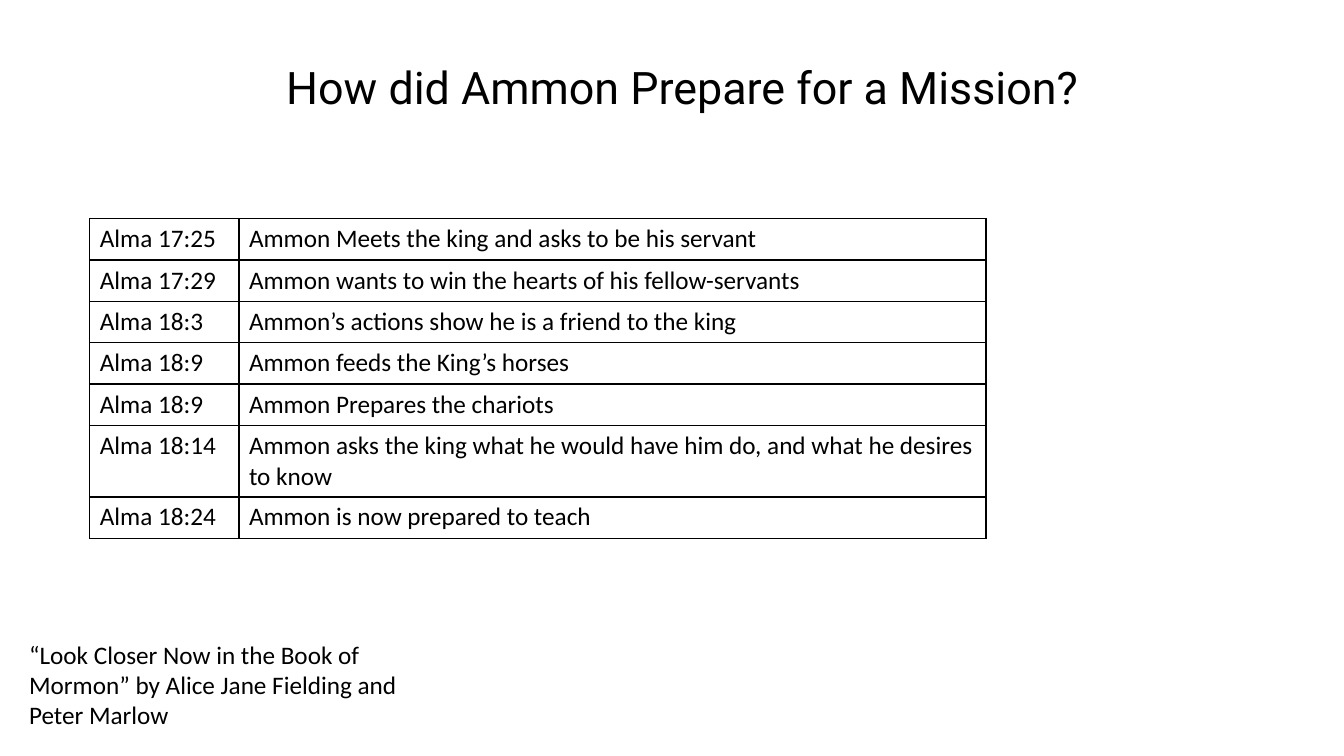
from lxml import etree
from pptx import Presentation
from pptx.dml.color import RGBColor
from pptx.enum import text
from pptx.oxml import ns
from pptx.util import Inches, Pt

BLACK = "000000"
VERSES = [
    ("Alma 17:25", "Ammon Meets the king and asks to be his servant"),
    ("Alma 17:29", "Ammon wants to win the hearts of his fellow-servants"),
    ("Alma 18:3", "Ammon’s actions show he is a friend to the king"),
    ("Alma 18:9", "Ammon feeds the King’s horses"),
    ("Alma 18:9", "Ammon Prepares the chariots"),
    ("Alma 18:14", "Ammon asks the king what he would have him do, "
                   "and what he desires to know"),
    ("Alma 18:24", "Ammon is now prepared to teach"),
]


def rgb(value):
    return RGBColor.from_string(value)


def write(tf, words, size, font):
    tf.text = words
    tf.word_wrap = True
    f = tf.paragraphs[0].runs[0].font
    f.size, f.name = Pt(size), font
    f.color.rgb = rgb(BLACK)


def add_text(slide, box, words, size, font):
    sp = slide.shapes.add_textbox(*map(Inches, box))
    write(sp.text_frame, words, size, font)
    sp.text_frame.auto_size = text.MSO_AUTO_SIZE.SHAPE_TO_FIT_TEXT


def add_borders(cell, color, width):
    """Draw a solid line on all four sides of the cell."""
    tc_pr = cell._tc.get_or_add_tcPr()
    for i, side in enumerate(("a:lnL", "a:lnR", "a:lnT", "a:lnB")):
        ln = etree.Element(ns.qn(side), w=str(Pt(width)))
        fill = etree.SubElement(ln, ns.qn("a:solidFill"))
        etree.SubElement(fill, ns.qn("a:srgbClr"), val=color)
        tc_pr.insert(i, ln)


def add_verse_table(slide, box, rows, reference_width):
    left, top, width, row_height = box
    table = slide.shapes.add_table(
        len(rows), 2, Inches(left), Inches(top),
        Inches(width), Inches(row_height * len(rows))).table
    table.first_row = table.horz_banding = False
    table.columns[0].width = Inches(reference_width)
    table.columns[1].width = Inches(width - reference_width)
    for r, row in enumerate(rows):
        table.rows[r].height = Inches(row_height)
        for c, words in enumerate(row):
            cell = table.cell(r, c)
            write(cell.text_frame, words, 18, "Calibri")
            cell.fill.background()
            add_borders(cell, BLACK, 1)


def main():
    prs = Presentation()
    prs.slide_width, prs.slide_height = Inches(13.33), Inches(7.5)
    slide = prs.slides.add_slide(prs.slide_layouts[6])
    add_verse_table(slide, (0.89, 2.17, 8.89, 0.41), VERSES, 1.48)
    add_text(slide, (0.19, 6.29, 4.2, 1.01),
             "“Look Closer Now in the Book of Mormon” "
             "by Alice Jane Fielding and Peter Marlow", 18, "Calibri")
    add_text(slide, (2.74, 0.54, 8.89, 0.64),
             "How did Ammon Prepare for a Mission?", 32, "Roboto")
    prs.save("out.pptx")


if __name__ == "__main__":
    main()
